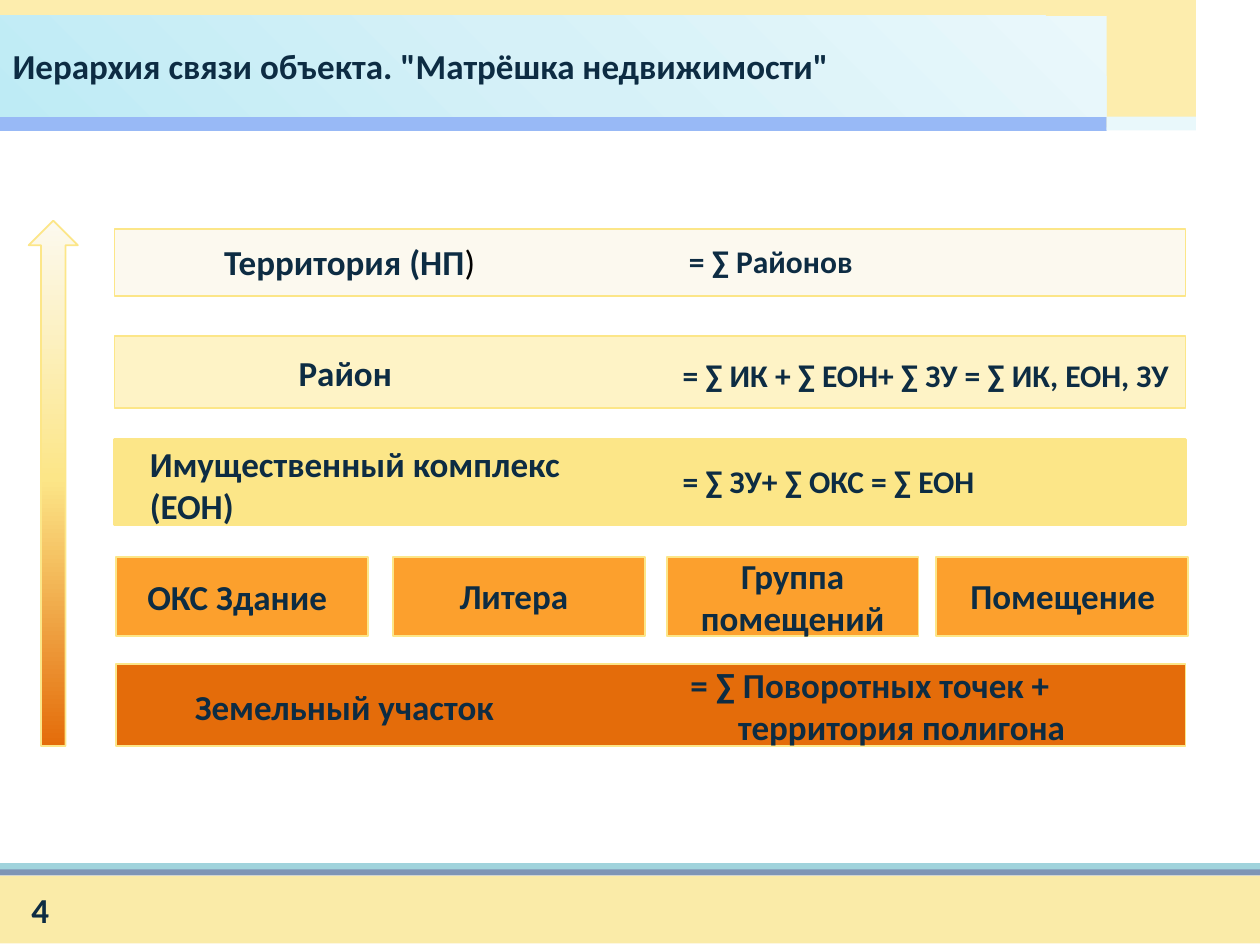
from dataclasses import dataclass

from lxml.etree import SubElement
from pptx import Presentation
from pptx.dml.color import RGBColor as Rgb
from pptx.enum.shapes import MSO_SHAPE as Preset
from pptx.enum.text import MSO_ANCHOR as Anchor, MSO_AUTO_SIZE as AutoSize, PP_ALIGN as Align
from pptx.oxml.ns import qn
from pptx.util import Cm, Pt

COLORS = {
    "ink": "0D2C43", "black": "000000", "border": "FCE688",
    "territory": "FCF9EF", "district": "FEF3C6", "complex": "FCE688",
    "unit": "FCA02D", "land": "E46C0A",
    "header": "FDEDAD", "header_start": "BEEBF5", "header_middle": "D6F1F8",
    "header_end": "EAF8FB", "header_line": "98B9F6", "header_corner": "E9F8FB",
    "footer": "FAEBA8", "footer_dark": "7E95B5", "footer_light": "A0D3DC",
}


@dataclass(frozen=True)
class Box:
    left: float
    top: float
    width: float
    height: float

    def lengths(self) -> tuple:
        return Cm(self.left), Cm(self.top), Cm(self.width), Cm(self.height)


@dataclass(frozen=True)
class Label:
    text: str
    box: Box
    size: int = 20
    align: Align = Align.LEFT
    tail: str = ""
    margin: float = 0
    indent: float = 0


@dataclass(frozen=True)
class Level:
    box: Box
    color: str
    name: Label
    formula: Label
    border: float = 1


@dataclass(frozen=True)
class Unit:
    left: float
    label: Label


LEVELS = [
    Level(Box(2.31, 4.62, 21.59, 1.35), "territory",
          Label("Территория (НП", Box(4.27, 4.72, 6.3, 1.12), tail=")"),
          Label("= ∑ Районов", Box(13.64, 4.75, 5.54, 1.02), 18)),
    Level(Box(2.31, 6.78, 21.59, 1.45), "district",
          Label("Район", Box(5.77, 6.96, 3.1, 1.12)),
          Label("= ∑ ИК + ∑ ЕОН+ ∑ ЗУ = ∑ ИК, ЕОН, ЗУ", Box(13.51, 7.06, 10.57, 1.02), 18)),
    Level(Box(2.31, 8.86, 21.59, 1.7), "complex",
          Label("Имущественный комплекс\n(ЕОН)", Box(2.77, 8.79, 10.95, 1.96)),
          Label("= ∑ ЗУ+ ∑ ОКС = ∑ ЕОН", Box(13.51, 9.19, 6.96, 1.02), 18), border=2),
    Level(Box(2.34, 13.39, 21.56, 1.65), "land",
          Label("Земельный участок", Box(3.68, 13.69, 7.29, 1.12)),
          Label("= ∑ Поворотных точек +\vтерритория полигона",
                Box(13.51, 13.26, 10.26, 1.96), margin=1.12, indent=-0.96)),
]
UNIT_TOP, UNIT_WIDTH, UNIT_HEIGHT = 11.23, 5.08, 1.6
UNITS = [
    Unit(2.34, Label("ОКС Здание", Box(2.72, 11.48, 4.78, 1.12))),
    Unit(7.92, Label("Литера", Box(8.43, 11.46, 3.86, 1.12), align=Align.CENTER)),
    Unit(13.44, Label("Группа\nпомещений", Box(13.87, 11.05, 4.22, 1.96), align=Align.CENTER)),
    Unit(18.87, Label("Помещение", Box(19.05, 11.46, 4.75, 1.12), align=Align.CENTER)),
]


def write(frame, text: str, *, size: int = 20, align: Align = Align.LEFT,
          anchor: Anchor = Anchor.TOP, tail: str = "", margin: float = 0,
          indent: float = 0) -> None:
    frame.word_wrap = True
    frame.vertical_anchor = anchor
    frame.text = text
    for paragraph in frame.paragraphs:
        paragraph.alignment = align
        if margin:
            properties = paragraph._p.get_or_add_pPr()
            properties.set("marL", str(Cm(margin)))
            properties.set("indent", str(Cm(indent)))
    if tail:
        frame.paragraphs[-1].add_run().text = tail
    for paragraph in frame.paragraphs:
        for run in paragraph.runs:
            is_tail = bool(tail) and run.text == tail
            run.font.name = "Calibri"
            run.font.size = Pt(size)
            run.font.bold = not is_tail
            run.font.color.rgb = Rgb.from_string(COLORS["black" if is_tail else "ink"])


def draw_label(shapes, label: Label) -> None:
    frame = shapes.add_textbox(*label.box.lengths()).text_frame
    write(frame, label.text, size=label.size, align=label.align, tail=label.tail,
          margin=label.margin, indent=label.indent)
    frame.auto_size = AutoSize.SHAPE_TO_FIT_TEXT


def draw_shape(shapes, box: Box, color: str = "", border: float = 0,
               preset: Preset = Preset.RECTANGLE):
    shape = shapes.add_shape(preset, *box.lengths())
    shape.shadow.inherit = False
    if color:
        shape.fill.solid()
        shape.fill.fore_color.rgb = Rgb.from_string(COLORS[color])
    else:
        shape.fill.background()
    if border:
        shape.line.width = Pt(border)
        shape.line.color.rgb = Rgb.from_string(COLORS["border"])
    else:
        shape.line.fill.background()
    return shape


def apply_gradient(shape, stops: list[tuple[int, str]], radial: bool = False) -> None:
    shape.fill.gradient()
    gradient = shape.element.spPr.find(qn("a:gradFill"))
    for child in list(gradient):
        gradient.remove(child)
    stop_list = SubElement(gradient, qn("a:gsLst"))
    for position, color in stops:
        stop = SubElement(stop_list, qn("a:gs"), pos=str(position * 1000))
        SubElement(stop, qn("a:srgbClr"), val=COLORS[color])
    if radial:
        course = SubElement(gradient, qn("a:path"), path="circle")
        SubElement(course, qn("a:fillToRect"), t="100000", r="100000")
    else:
        SubElement(gradient, qn("a:lin"), ang="5400000", scaled="0")


def draw_header(slide) -> None:
    shapes = slide.shapes
    draw_shape(shapes, Box(-0.02, 0, 24.13, 2.57), "header")
    band = draw_shape(shapes, Box(-0.02, 0.32, 22.33, 2.04), "header_start")
    apply_gradient(band, [(0, "header_start"), (50, "header_middle"), (100, "header_end")],
                   radial=True)
    draw_shape(shapes, Box(-0.02, 2.36, 22.33, 0.28), "header_line")
    draw_shape(shapes, Box(22.31, 2.35, 1.8, 0.28), "header_corner")
    title = shapes.title
    title.left, title.top, title.width, title.height = Box(0, 0.77, 19.4, 1.12).lengths()
    write(title.text_frame, 'Иерархия связи объекта. "Матрёшка недвижимости"')
    title.text_frame.auto_size = AutoSize.NONE
    title.element.getparent().append(title.element)


def draw_footer(slide) -> None:
    shapes = slide.shapes.add_group_shape().shapes
    draw_shape(shapes, Box(-0.02, 17.65, 25.42, 1.37), "footer")
    draw_shape(shapes, Box(-0.02, 17.52, 25.42, 0.13), "footer_dark")
    draw_shape(shapes, Box(0, 17.4, 25.4, 0.13), "footer_light")
    number = draw_shape(shapes, Box(0, 17.74, 1.92, 1.19), preset=Preset.PENTAGON)
    write(number.text_frame, "4", align=Align.CENTER, anchor=Anchor.MIDDLE)


def draw_hierarchy(slide) -> None:
    shapes = slide.shapes
    arrow = draw_shape(shapes, Box(0.58, 4.45, 0.99, 10.59), "land", 1, Preset.UP_ARROW)
    apply_gradient(arrow, [(0, "territory"), (49, "complex"), (100, "land")])
    for level in LEVELS:
        draw_shape(shapes, level.box, level.color, level.border)
        draw_label(shapes, level.name)
        draw_label(shapes, level.formula)
    for unit in UNITS:
        draw_shape(shapes, Box(unit.left, UNIT_TOP, UNIT_WIDTH, UNIT_HEIGHT), "unit", 1)
        draw_label(shapes, unit.label)


def main() -> None:
    deck = Presentation()
    deck.slide_width, deck.slide_height = Cm(25.4), Cm(19.05)
    slide = deck.slides.add_slide(deck.slide_layouts[5])
    draw_hierarchy(slide)
    draw_header(slide)
    draw_footer(slide)
    deck.save("out.pptx")


if __name__ == "__main__":
    main()
